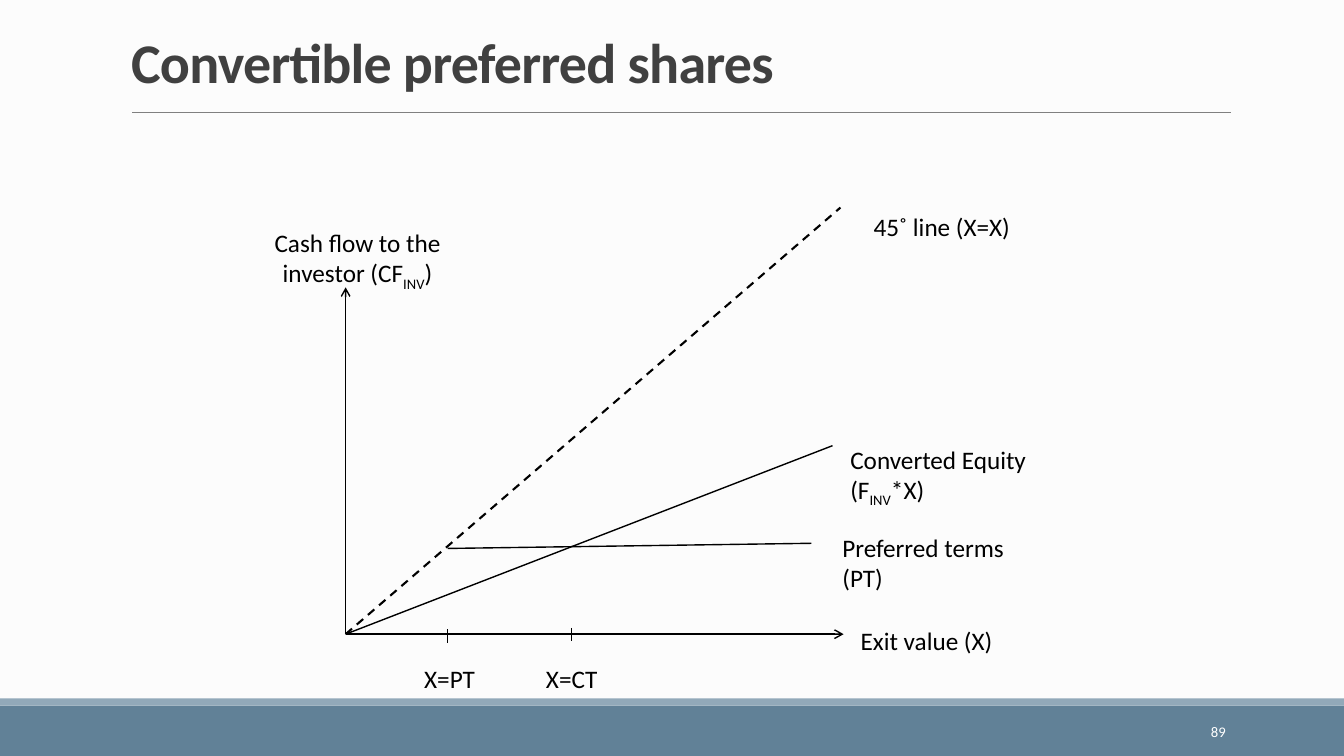
from dataclasses import dataclass

from lxml import etree
from pptx import Presentation, util as u
from pptx.dml.color import RGBColor
from pptx.enum import dml, shapes, text
from pptx.oxml.ns import qn


@dataclass(frozen=True)
class Theme:
    font: str = "Calibri"
    background: str = "FCFCFC"
    band: str = "618197"
    band_edge: str = "92A9B9"
    rule: str = "808080"
    title: str = "404040"
    ink: str = "000000"
    number: str = "FFFFFF"
    title_size: float = 40
    label_size: float = 18
    number_size: float = 10.5


def add_run(p, words, *, font, size, color, bold=False, baseline=0, spacing=0):
    """Add a run; baseline is in thousandths of a percent, spacing in 1/100 pt."""
    r = p.add_run()
    r.text = words
    r.font.name, r.font.size, r.font.bold = font, u.Pt(size), bold
    r.font.color.rgb = RGBColor.from_string(color)
    rpr = r.font._element
    if baseline:
        rpr.set("baseline", str(baseline))
    if spacing:
        rpr.set("spc", str(spacing))


class Canvas:
    def __init__(self, slide, theme):
        self.slide, self.theme = slide, theme
        fill = slide.background.fill
        fill.solid()
        fill.fore_color.rgb = RGBColor.from_string(theme.background)

    def band(self, top, height, color):
        sp = self.slide.shapes.add_shape(
            shapes.MSO_SHAPE.RECTANGLE, 0, u.Cm(top), u.Cm(WIDTH), u.Cm(height))
        sp.shadow.inherit = False
        sp.fill.solid()
        sp.fill.fore_color.rgb = RGBColor.from_string(color)
        sp.line.fill.background()

    def title(self, words, left, top, width, height):
        sp = self.slide.shapes.title
        sp.left, sp.top, sp.width, sp.height = map(u.Cm, (left, top, width, height))
        tf = sp.text_frame
        tf.auto_size = text.MSO_AUTO_SIZE.NONE
        tf.vertical_anchor = text.MSO_ANCHOR.MIDDLE
        p = tf.paragraphs[0]
        p.alignment, p.line_spacing = text.PP_ALIGN.LEFT, 0.85
        add_run(p, words, font=self.theme.font, size=self.theme.title_size,
                color=self.theme.title, bold=True, spacing=-50)

    def line(self, start, end, *, color=None, weight=1, dash=False, arrow=False):
        """Draw a line, with an optional arrowhead at its end."""
        sp = self.slide.shapes.add_connector(
            shapes.MSO_CONNECTOR.STRAIGHT, *map(u.Cm, (*start, *end)))
        sp.line.color.rgb = RGBColor.from_string(color or self.theme.ink)
        sp.line.width = u.Pt(weight)
        if dash:
            sp.line.dash_style = dml.MSO_LINE.DASH
        sppr = sp._element.spPr
        if arrow:
            etree.SubElement(sppr.find(qn("a:ln")), qn("a:tailEnd"), type="arrow")
        etree.SubElement(sppr, qn("a:effectLst"))

    def label(self, parts, left, top, width, height=0.81, *, size=None, color=None,
              align=text.PP_ALIGN.LEFT, anchor=text.MSO_ANCHOR.TOP):
        """Write a label; every second part is a subscript."""
        sp = self.slide.shapes.add_textbox(*map(u.Cm, (left, top, width, height)))
        tf = sp.text_frame
        tf.word_wrap, tf.vertical_anchor = True, anchor
        p = tf.paragraphs[0]
        p.alignment = align
        for i, words in enumerate(parts):
            add_run(p, words, font=self.theme.font, size=size or self.theme.label_size,
                    color=color or self.theme.ink, baseline=-25000 if i % 2 else 0)


WIDTH, HEIGHT = 33.87, 19.05
ORIGIN_X, ORIGIN_Y = ORIGIN = 8.71, 15.98
PT_X, CT_X = 11.28, 14.4


def main():
    prs = Presentation()
    prs.slide_width, prs.slide_height = u.Cm(WIDTH), u.Cm(HEIGHT)
    theme = Theme()
    canvas = Canvas(prs.slides.add_slide(prs.slide_layouts[5]), theme)

    canvas.band(17.78, 1.27, theme.band)
    canvas.band(17.6, 0.18, theme.band_edge)
    canvas.line((3.33, 2.84), (31.01, 2.84), color=theme.rule, weight=0.5)
    canvas.title("Convertible preferred shares", 3.05, 0.79, 27.94, 1.78)
    canvas.label(["89"], 27.51, 17.93, 3.63, 1.02, size=theme.number_size,
                 color=theme.number, align=text.PP_ALIGN.RIGHT,
                 anchor=text.MSO_ANCHOR.MIDDLE)

    # Axes and their marks
    canvas.line(ORIGIN, (ORIGIN_X, 7.24), arrow=True)
    canvas.line(ORIGIN, (21.26, ORIGIN_Y), arrow=True)
    for x, top, bottom in ((PT_X, 15.85, 16.21), (CT_X, 15.82, 16.15)):
        canvas.line((x, top), (x, bottom))

    # Payoff lines
    canvas.line(ORIGIN, (21.18, 5.23), weight=1.5, dash=True)
    canvas.line(ORIGIN, (20.98, 11.23))
    canvas.line((PT_X, 13.82), (20.45, 13.69))

    canvas.label(["Cash flow to the investor (CF", "INV", ")"], 6.38, 5.61, 5.26, 1.45,
                 align=text.PP_ALIGN.CENTER)
    canvas.label(["45˚ line (X=X)"], 21.77, 5.21, 6.68)
    canvas.label(["Converted Equity (F", "INV", "*X)"], 21.18, 11.07, 6.68)
    canvas.label(["Preferred terms (PT)"], 20.98, 13.28, 4.67)
    canvas.label(["Exit value (X)"], 21.44, 15.62, 4.47)
    canvas.label(["X=PT"], 10.44, 16.59, 1.91, 1.02)
    canvas.label(["X=CT"], 13.51, 16.59, 2.41)

    prs.save("out.pptx")


if __name__ == "__main__":
    main()
